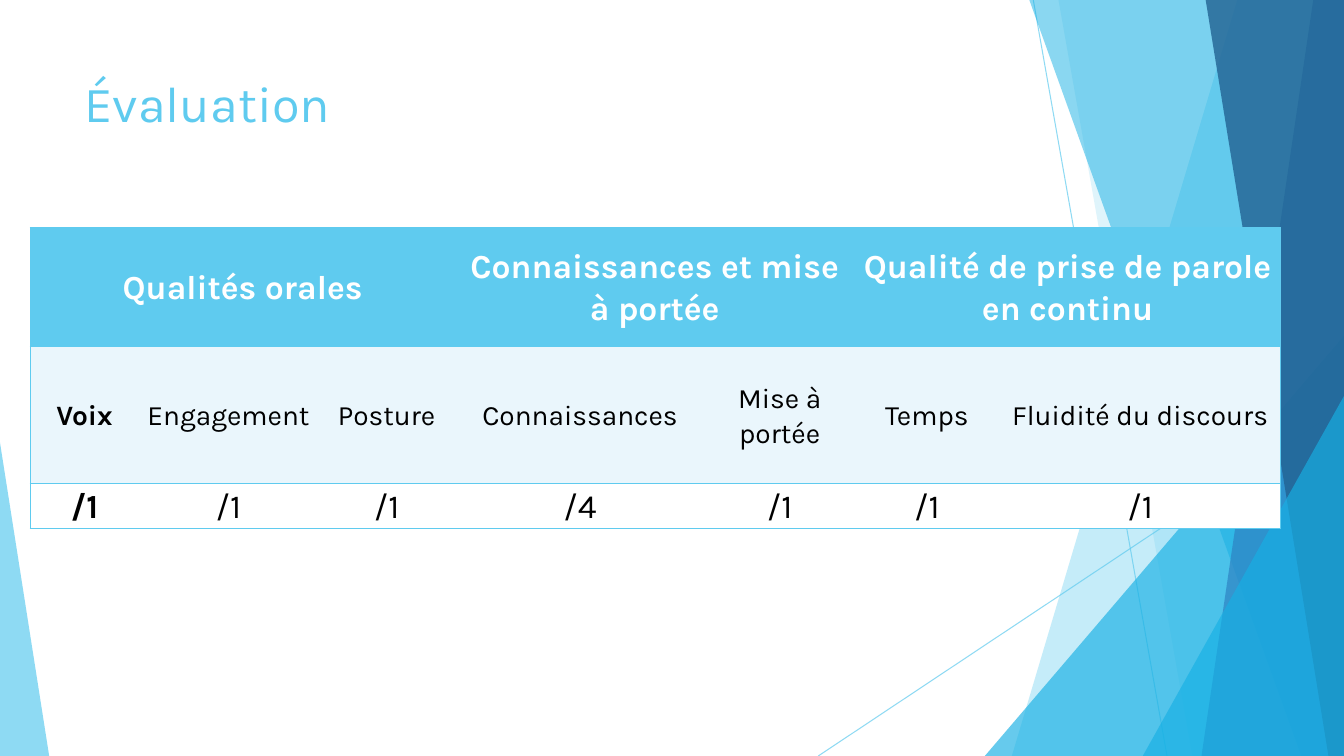
"""Builds the grading grid slide with its faceted blue background."""
from lxml.etree import SubElement
from pptx import Presentation
from pptx.dml.color import RGBColor
from pptx.enum.shapes import MSO_CONNECTOR as Link, MSO_SHAPE as Shape
from pptx.enum.text import MSO_ANCHOR as Anchor, PP_ALIGN as Align
from pptx.oxml import parse_xml
from pptx.oxml.ns import nsdecls, qn
from pptx.util import Cm, Pt

SKY = RGBColor(0x5F, 0xCB, 0xEF)
CYAN = RGBColor(0x17, 0xB0, 0xE4)
BLUE = RGBColor(0x2E, 0x83, 0xC3)
NAVY = RGBColor(0x22, 0x62, 0x92)
PALE = RGBColor(0xEA, 0xF6, 0xFC)
WHITE = RGBColor(0xFF, 0xFF, 0xFF)
BLACK = RGBColor(0, 0, 0)
FONT = "Karla"
WIDE, HIGH = 33.87, 19.05

TITLE = "Évaluation"
HEADS = [
    ("Qualités orales", 3),
    ("Connaissances et mise à portée", 2),
    ("Qualité de prise de parole en continu", 2),
]
SKILLS = ["Voix", "Engagement", "Posture", "Connaissances",
          "Mise à portée", "Temps", "Fluidité du discours"]
MARKS = ["/1", "/1", "/1", "/4", "/1", "/1", "/1"]
COLS = [2.74, 4.52, 3.45, 6.3, 3.76, 3.66, 7.09]
ROWS = [3, 3.45, 1.12]
LOOKS = [(SKY, WHITE, 24), (PALE, BLACK, 20), (WHITE, BLACK, 24)]

LINES = [(26.04, 0, 29.41, HIGH), (WIDE, 10.24, 20.62, HIGH)]
FACETS = [
    ("band", (31.19, 25.5), SKY, 36),
    ("band", (26.67, 30.05), SKY, 20),
    ("peak", (24.82, 8.46, 9.05, 1), CYAN, 66),
    ("band", (25.93, 32.79), CYAN, 50),
    ("band", (33.1, 30.28), BLUE, 70),
    ("band", (30.38, 33.48), NAVY, 80),
    ("peak", (28.8, 9.98, 5.07, 1), CYAN, 66),
    ("peak", (0, 11.15, 1.24, 0), SKY, 70),
]


def fade(part, rate):
    for tint in part.iter(qn("a:srgbClr")):
        SubElement(tint, qn("a:alpha")).set("val", str(rate * 1000))


def add_line(slide, ends):
    line = slide.shapes.add_connector(Link.STRAIGHT, *map(Cm, ends))
    line.line.color.rgb = SKY
    line.line.width = Pt(0.75)
    props = line._element.spPr
    fade(props, 70)
    SubElement(props, qn("a:effectLst"))


def add_facet(slide, kind, place, color, rate):
    if kind == "band":
        top, base = place
        path = slide.shapes.build_freeform(Cm(top), Cm(-0.03))
        path.add_line_segments([(Cm(x), Cm(y)) for x, y in
                                [(WIDE, -0.03), (WIDE, HIGH), (base, HIGH)]])
        facet = path.convert_to_shape()
    else:
        left, top, width, tip = place
        facet = slide.shapes.add_shape(Shape.ISOSCELES_TRIANGLE, Cm(left), Cm(top),
                                       Cm(width), Cm(HIGH - top))
        facet.adjustments[0] = tip
    facet.fill.solid()
    facet.fill.fore_color.rgb = color
    facet.line.fill.background()
    facet.shadow.inherit = False
    fade(facet._element.spPr, rate)


def add_title(slide):
    box = slide.shapes.add_textbox(Cm(1.88), Cm(1.7), Cm(23.88), Cm(3.66))
    box.text_frame.word_wrap = True
    para = box.text_frame.paragraphs[0]
    para.text = TITLE
    para.font.name, para.font.size = FONT, Pt(36)
    para.font.color.rgb = SKY


def set_edges(cell, shown):
    props = cell._tc.get_or_add_tcPr()
    for spot, side in enumerate("LRTB"):
        paint = f'<a:solidFill><a:srgbClr val="{SKY}"/></a:solidFill>'
        if side not in shown:
            paint = "<a:noFill/>"
        props.insert(spot, parse_xml(
            f'<a:ln{side} {nsdecls("a")} w="{Pt(1)}">{paint}</a:ln{side}>'))


def fill_cell(cell, text, look, bold):
    back, ink, size = look
    cell.fill.solid()
    cell.fill.fore_color.rgb = back
    cell.vertical_anchor = Anchor.MIDDLE
    cell.margin_left = cell.margin_right = Cm(0.18)
    cell.margin_top = cell.margin_bottom = 0
    para = cell.text_frame.paragraphs[0]
    para.text = text
    para.alignment = Align.CENTER
    para.line_spacing, para.space_after = 1.07, Pt(8)
    para.font.name, para.font.size, para.font.bold = FONT, Pt(size), bold
    para.font.color.rgb = ink


def add_grid(slide):
    grid = slide.shapes.add_table(len(ROWS), len(COLS), Cm(0.76), Cm(5.74),
                                  Cm(sum(COLS)), Cm(sum(ROWS))).table
    for col, width in zip(grid.columns, COLS):
        col.width = Cm(width)
    for row, height in zip(grid.rows, ROWS):
        row.height = Cm(height)
    heads = []
    for text, span in HEADS:
        first = len(heads)
        heads += [text] + [""] * (span - 1)
        grid.cell(0, first).merge(grid.cell(0, first + span - 1))
    for r, texts in enumerate([heads, SKILLS, MARKS]):
        for c, text in enumerate(texts):
            cell = grid.cell(r, c)
            fill_cell(cell, text, LOOKS[r], r == 0 or c == 0)
            last = c + (cell.span_width if cell.is_merge_origin else 1)
            set_edges(cell, "TB" + "L" * (c == 0) + "R" * (last == len(COLS)))


def main():
    deck = Presentation()
    deck.slide_width, deck.slide_height = Cm(WIDE), Cm(HIGH)
    slide = deck.slides.add_slide(deck.slide_layouts[6])
    for ends in LINES:
        add_line(slide, ends)
    for facet in FACETS:
        add_facet(slide, *facet)
    add_title(slide)
    add_grid(slide)
    deck.save("out.pptx")


if __name__ == "__main__":
    main()
